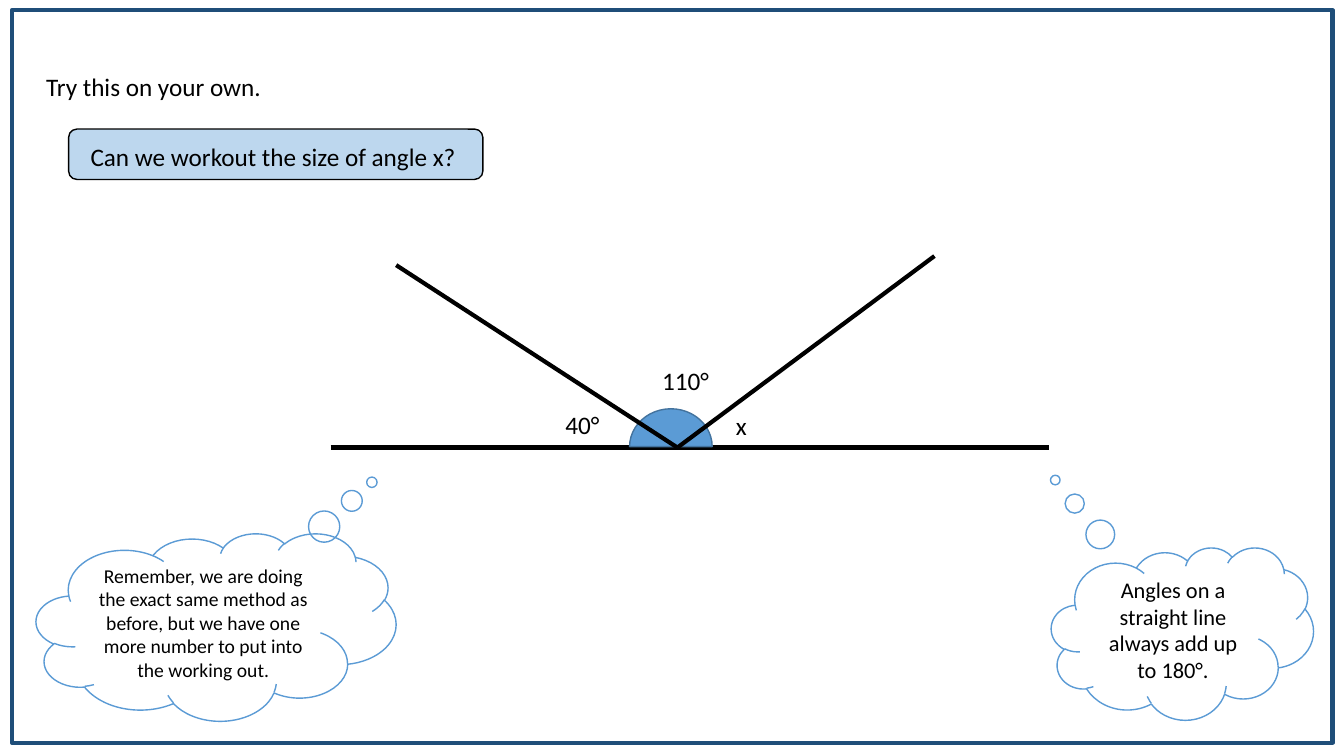
from lxml import etree
from pptx import Presentation
from pptx.dml.color import RGBColor
from pptx.enum import shapes, text
from pptx.oxml.ns import qn
from pptx.util import Pt

SHAPE = shapes.MSO_SHAPE
FONT = "Calibri"
BLACK = "000000"
BLUE = "5B9BD5"


def color(code):
    return RGBColor.from_string(code)


def shape(slide, kind, box, fill, edge, width=1):
    item = slide.shapes.add_shape(kind, *map(Pt, box))
    item.shadow.inherit = False
    if fill:
        item.fill.solid()
        item.fill.fore_color.rgb = color(fill)
    else:
        item.fill.background()
    item.line.color.rgb = color(edge)
    item.line.width = Pt(width)
    return item


def line(slide, start, end):
    item = slide.shapes.add_connector(
        shapes.MSO_CONNECTOR.STRAIGHT, *map(Pt, (*start, *end)))
    item.line.color.rgb = color(BLACK)
    item.line.width = Pt(3)
    etree.SubElement(item._element.spPr, qn("a:effectLst"))


def write(para, words, size):
    run = para.add_run()
    run.text = words
    run.font.name = FONT
    run.font.size = Pt(size)
    run.font.color.rgb = color(BLACK)


def label(slide, box, words):
    frame = slide.shapes.add_textbox(*map(Pt, box)).text_frame
    frame.word_wrap = False
    frame.auto_size = text.MSO_AUTO_SIZE.SHAPE_TO_FIT_TEXT
    write(frame.paragraphs[0], words, 18)


def question(slide, box, words):
    left, top, width, height = box
    shape(slide, SHAPE.ROUNDED_RECTANGLE, box, "BDD7EE", BLACK)
    label(slide, (left + 8.6, top + 5, width - 17.2, height - 7), words)


def angles(slide, box):
    """Two rays that meet on a straight line, with the angles between them."""
    left, top, width, height = box
    base = top + height
    mid = left + 247.7
    line(slide, (left, base), (left + width, base))
    pie = shape(slide, SHAPE.PIE, (mid - 31.7, base - 30.2, 54, 59),
                BLUE, "43739E")
    pie.adjustments[0] = 54
    pie.adjustments[1] = 162
    pie.rotation = 90
    for x, y in ((left + 46.8, top + 6.5), (left + 431.3, top)):
        line(slide, (x, y), (mid, base))
    for words, across, up, wide in (("40°", -87.1, 31, 38.9),
                                    ("110°", -18, 62, 48.2),
                                    ("x", 34.6, 30.4, 22.3)):
        label(slide, (mid + across, base - up, wide, 29), words)


def thought(slide, box, tail, words, size):
    cloud = shape(slide, SHAPE.CLOUD_CALLOUT, box, None, BLUE)
    for index, value in enumerate(tail):
        cloud.adjustments[index] = value
    frame = cloud.text_frame
    frame.word_wrap = True
    frame.vertical_anchor = text.MSO_ANCHOR.MIDDLE
    para = frame.paragraphs[0]
    para.alignment = text.PP_ALIGN.CENTER
    write(para, words, size)


def main():
    deck = Presentation()
    deck.slide_width, deck.slide_height = Pt(960), Pt(540)
    slide = deck.slides.add_slide(deck.slide_layouts[6])
    shape(slide, SHAPE.RECTANGLE, (8.6, 7.2, 943.2, 523.4), None, "1F4E79", 3)
    label(slide, (25.9, 47.5, 170, 29), "Try this on your own.")
    question(slide, (49, 92.2, 295.9, 36), "Can we workout the size of angle x?")
    angles(slide, (236.2, 182.9, 513.4, 136.8))
    thought(slide, (751, 391, 187.2, 123.1), (-0.485, -0.891),
            "Angles on a straight line always add up to 180°.", 16)
    thought(slide, (25.9, 380.9, 257, 133.9), (0.433, -0.772),
            "Remember, we are doing the exact same method as before, but we "
            "have one more number to put into the working out.", 14)
    deck.save("out.pptx")


if __name__ == "__main__":
    main()
